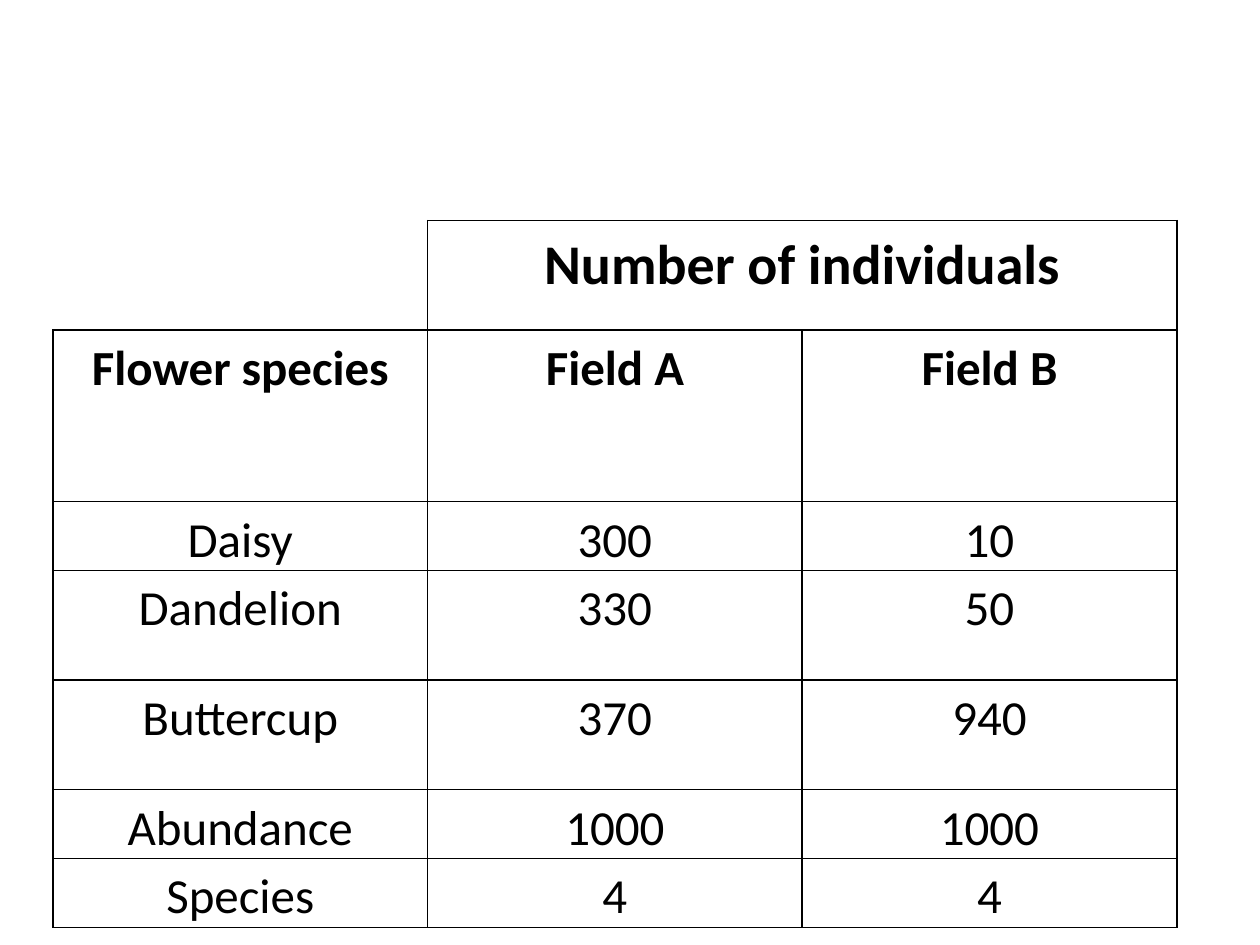
from dataclasses import dataclass

from lxml.etree import SubElement
from pptx import Presentation
from pptx.dml.color import RGBColor
from pptx.enum.text import PP_ALIGN as Align
from pptx.oxml.ns import qn
from pptx.util import Inches, Pt


@dataclass(frozen=True)
class Theme:
    font: str = "Calibri"
    ink: str = "000000"
    heading: int = 32
    body: int = 28
    border: int = 1


THEME = Theme()
ROWS = [
    ("", "Number of individuals", ""),
    ("Flower species", "Field A", "Field B"),
    ("Daisy", "300", "10"),
    ("Dandelion", "330", "50"),
    ("Buttercup", "370", "940"),
    ("Abundance", "1000", "1000"),
    ("Species", "4", "4"),
]
HEADER_ROWS = 2
ROW_HEIGHTS = [0.87, 1.36, 0.51, 0.87, 0.87, 0.51, 0.51]


def set_borders(cell, sides):
    """Draw the sides named in a string of L, R, T and B; hide the others."""
    properties = cell._tc.get_or_add_tcPr()
    for position, side in enumerate("LRTB"):
        line = SubElement(properties, qn(f"a:ln{side}"), w=str(Pt(THEME.border)))
        if side in sides:
            fill = SubElement(line, qn("a:solidFill"))
            SubElement(fill, qn("a:srgbClr"), val=THEME.ink)
        else:
            SubElement(line, qn("a:noFill"))
        properties.insert(position, line)


def write_cell(cell, text, size, bold):
    cell.margin_left = cell.margin_right = Inches(0.03)
    cell.margin_top = cell.margin_bottom = 0
    cell.text_frame.text = text
    para = cell.text_frame.paragraphs[0]
    para.alignment = Align.CENTER
    para.line_spacing = 1.15
    para.space_after = Pt(10)
    for span in para.runs:
        span.font.name = THEME.font
        span.font.size = Pt(size)
        span.font.bold = bold
        span.font.color.rgb = RGBColor.from_string(THEME.ink)


def add_species_table(page, left, top, width, height):
    column_count = len(ROWS[0])
    table = page.shapes.add_table(
        len(ROWS), column_count, left, top, width, height
    ).table
    table.first_row = table.horz_banding = False
    for column in table.columns:
        column.width = width // column_count
    for row, row_height in zip(table.rows, ROW_HEIGHTS):
        row.height = Inches(row_height)
    table.cell(0, 1).merge(table.cell(0, 2))

    for r, texts in enumerate(ROWS):
        for c, text in enumerate(texts):
            cell = table.cell(r, c)
            cell.fill.background()
            set_borders(cell, "RB" if r == c == 0 else "LRTB")
            if text:
                size = THEME.heading if r == 0 else THEME.body
                write_cell(cell, text, size, r < HEADER_ROWS)


def main():
    deck = Presentation()
    deck.slide_width, deck.slide_height = Inches(10), Inches(7.5)
    page = deck.slides.add_slide(deck.slide_layouts[6])
    add_species_table(
        page, Inches(0.42), Inches(1.75), Inches(8.92), Inches(sum(ROW_HEIGHTS))
    )
    deck.save("out.pptx")


if __name__ == "__main__":
    main()
